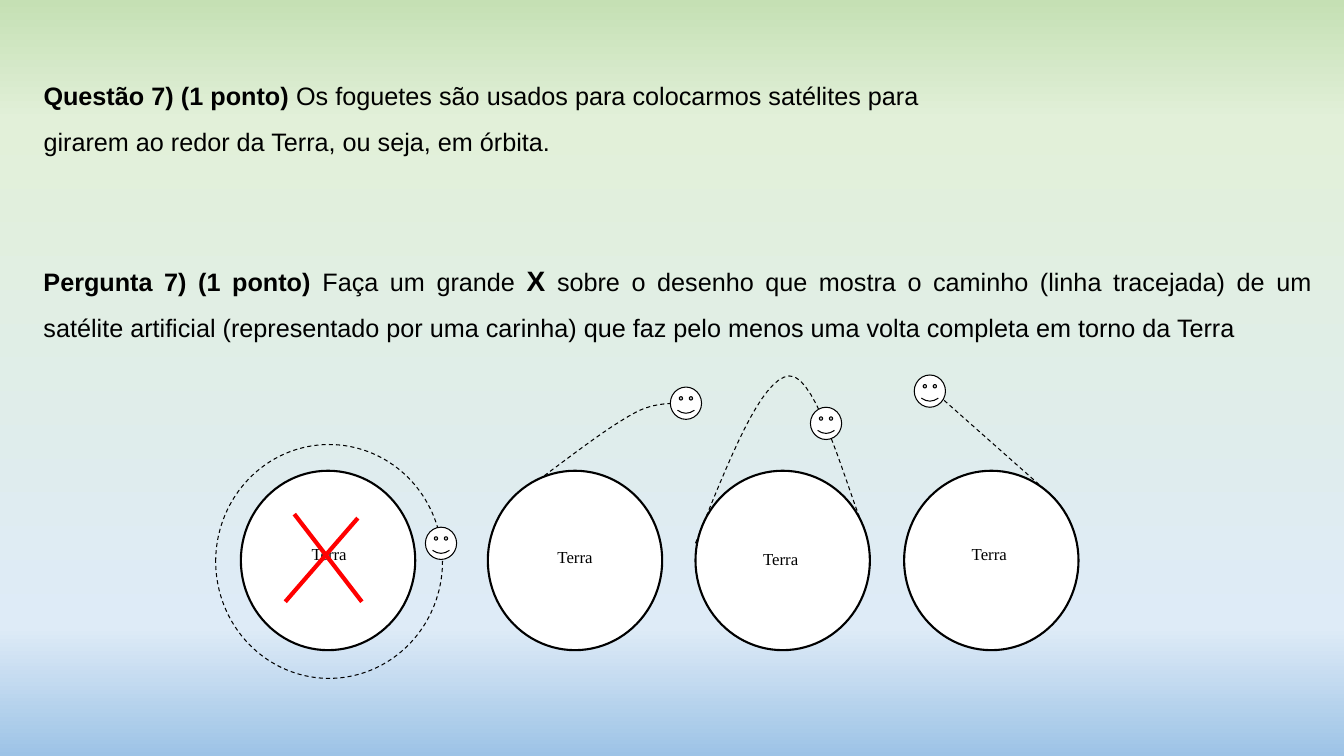
from dataclasses import dataclass
from typing import Optional

from lxml import etree
from pptx import Presentation
from pptx import util as u
from pptx.dml import color
from pptx.enum import dml, shapes, text
from pptx.oxml import ns

COLUMNS, ROWS = 160, 90
SLIDE_WIDTH, SLIDE_HEIGHT = u.Inches(13.333), u.Inches(7.5)
BLACK, WHITE, RED = "000000", "FFFFFF", "FF0000"
SKY = [(0, "C5E0B4"), (16, "E2F0D9"), (83, "DEEBF7"), (100, "9DC3E6")]
CURVE_STEPS = 16
EARTH_TOP, EARTH_SIZE = 56.04, (20.76, 21.36)
LABEL_SIZE = (11.88, 5.04)
SATELLITE_SIZE = (3.72, 3.84)

Point = tuple[float, float]


@dataclass(frozen=True)
class Box:
    left: float
    top: float
    width: float
    height: float


@dataclass(frozen=True)
class Scene:
    earth_left: float
    label: Point
    satellite: Point
    orbit: Optional[Box] = None
    curve: tuple[Point, ...] = ()
    straight: tuple[Point, ...] = ()


@dataclass(frozen=True)
class Run:
    wording: str
    bold: bool = False
    size: float = 18


SCENES = [
    Scene(28.68, (33.24, 64.68), (50.64, 62.76), orbit=Box(25.68, 52.92, 27, 27.84)),
    Scene(58.08, (62.52, 65.04), (79.8, 46.08), curve=(
        (64.8, 56.64), (69, 53.52), (73.2, 50.28), (76.2, 48.84),
        (79.2, 47.52), (82.08, 48.24), (82.8, 48.12),
        (83.52, 48), (82.08, 48.12), (80.52, 48.12))),
    Scene(82.8, (87, 65.28), (96.48, 48.48), curve=(
        (82.8, 64.68), (86.76, 54.84), (90.6, 45), (93.96, 44.76),
        (97.32, 44.4), (101.28, 59.76), (102.84, 62.76))),
    Scene(107.64, (111.84, 64.68), (108.84, 44.64),
          straight=((125.64, 59.4), (110.88, 46.32))),
]
CROSS = [((35.04, 61.2), (43.08, 71.64)), ((42.6, 61.68), (33.96, 71.64))]

STATEMENTS = [
    (Box(4, 7.2, 106.56, 12.12), [
        Run("Questão 7) (1 ponto) ", bold=True),
        Run("Os foguetes são usados para colocarmos satélites para girarem ao redor "
            "da Terra, ou seja, em órbita."),
    ]),
    (Box(4, 28.8, 153.36, 12.72), [
        Run("Pergunta 7) (1 ponto) ", bold=True),
        Run("Faça um grande "),
        Run("X", bold=True, size=20),
        Run(" sobre o desenho que mostra o caminho (linha tracejada) de um satélite "
            "artificial (representado por uma carinha) que faz pelo menos uma volta "
            "completa em torno da Terra"),
    ]),
]


def rgb(value: str) -> color.RGBColor:
    return color.RGBColor.from_string(value)


def across(columns: float) -> int:
    return round(SLIDE_WIDTH * columns / COLUMNS)


def down(rows: float) -> int:
    return round(SLIDE_HEIGHT * rows / ROWS)


def place(box: Box) -> tuple[int, int, int, int]:
    return across(box.left), down(box.top), across(box.width), down(box.height)


def paint_background(slide) -> None:
    fill = slide.background.fill
    fill.gradient()
    fill.gradient_angle = 270
    stops = slide.element.find(".//" + ns.qn("a:gsLst"))
    for stop in list(stops):
        stops.remove(stop)
    for percent, value in SKY:
        stop = etree.SubElement(stops, ns.qn("a:gs"), pos=str(percent * 1000))
        etree.SubElement(stop, ns.qn("a:srgbClr"), val=value)


def format_line(line, width: float, value: str = BLACK, dashed: bool = False) -> None:
    line.color.rgb = rgb(value)
    line.width = u.Pt(width)
    if dashed:
        line.dash_style = dml.MSO_LINE.DASH


def write(paragraph, wording: str, *, font: str = "Arial", size: float = 18,
          bold: bool = False, value: str = BLACK) -> None:
    run = paragraph.add_run()
    run.text = wording
    run.font.name = font
    run.font.size = u.Pt(size)
    run.font.bold = bold
    run.font.color.rgb = rgb(value)


def add_statement(slide, box: Box, runs: list[Run]) -> None:
    frame = slide.shapes.add_textbox(*place(box)).text_frame
    frame.word_wrap = True
    frame.auto_size = text.MSO_AUTO_SIZE.SHAPE_TO_FIT_TEXT
    paragraph = frame.paragraphs[0]
    paragraph.alignment = text.PP_ALIGN.JUSTIFY
    paragraph.line_spacing = 1.5
    for run in runs:
        write(paragraph, run.wording, bold=run.bold, size=run.size)


def add_figure(group, kind, box: Box, *, filled: bool = True, width: float = 0,
               dashed: bool = False):
    shape = group.shapes.add_shape(kind, *place(box))
    shape.shadow.inherit = False
    if filled:
        shape.fill.solid()
        shape.fill.fore_color.rgb = rgb(WHITE)
    else:
        shape.fill.background()
    if width:
        format_line(shape.line, width, dashed=dashed)
    else:
        shape.line.fill.background()
    return shape


def add_straight(group, start: Point, end: Point, width: float, value: str = BLACK,
                 dashed: bool = False) -> None:
    connector = group.shapes.add_connector(
        shapes.MSO_CONNECTOR.STRAIGHT, across(start[0]), down(start[1]),
        across(end[0]), down(end[1]))
    format_line(connector.line, width, value, dashed)
    etree.SubElement(connector.element.spPr, ns.qn("a:effectLst"))


def bezier(controls: tuple[Point, ...], t: float) -> Point:
    weights = ((1 - t) ** 3, 3 * t * (1 - t) ** 2, 3 * t * t * (1 - t), t ** 3)
    x, y = (sum(w * c[axis] for w, c in zip(weights, controls)) for axis in (0, 1))
    return across(x), down(y)


def add_curve(group, controls: tuple[Point, ...]) -> None:
    points = [bezier(controls[first:first + 4], step / CURVE_STEPS)
              for first in range(0, len(controls) - 1, 3)
              for step in range(1, CURVE_STEPS + 1)]
    builder = group.shapes.build_freeform(*bezier(controls[:4], 0))
    builder.add_line_segments(points, close=False)
    shape = builder.convert_to_shape()
    shape.shadow.inherit = False
    shape.fill.background()
    format_line(shape.line, 0.75, dashed=True)


def add_scene(group, scene: Scene) -> None:
    circle = shapes.MSO_SHAPE.FLOWCHART_CONNECTOR
    add_figure(group, circle, Box(scene.earth_left, EARTH_TOP, *EARTH_SIZE), width=1.5)
    label = add_figure(group, shapes.MSO_SHAPE.RECTANGLE, Box(*scene.label, *LABEL_SIZE))
    frame = label.text_frame
    frame.margin_left = frame.margin_top = frame.margin_right = frame.margin_bottom = 0
    frame.vertical_anchor = text.MSO_ANCHOR.TOP
    frame.paragraphs[0].alignment = text.PP_ALIGN.CENTER
    write(frame.paragraphs[0], "Terra", font="Times New Roman", size=12)
    if scene.orbit:
        add_figure(group, circle, scene.orbit, filled=False, width=0.75, dashed=True)
    if scene.curve:
        add_curve(group, scene.curve)
    if scene.straight:
        add_straight(group, *scene.straight, 0.75, dashed=True)
    satellite = add_figure(group, shapes.MSO_SHAPE.SMILEY_FACE,
                           Box(*scene.satellite, *SATELLITE_SIZE), width=0.75)
    satellite.adjustments[0] = 0.047


def main() -> None:
    presentation = Presentation()
    presentation.slide_width, presentation.slide_height = SLIDE_WIDTH, SLIDE_HEIGHT
    slide = presentation.slides.add_slide(presentation.slide_layouts[6])
    paint_background(slide)
    for box, runs in STATEMENTS:
        add_statement(slide, box, runs)
    drawings = slide.shapes.add_group_shape()
    for scene in SCENES:
        add_scene(drawings, scene)
    cross = slide.shapes.add_group_shape()
    for start, end in CROSS:
        add_straight(cross, start, end, 3, RED)
    presentation.save("out.pptx")


if __name__ == "__main__":
    main()
